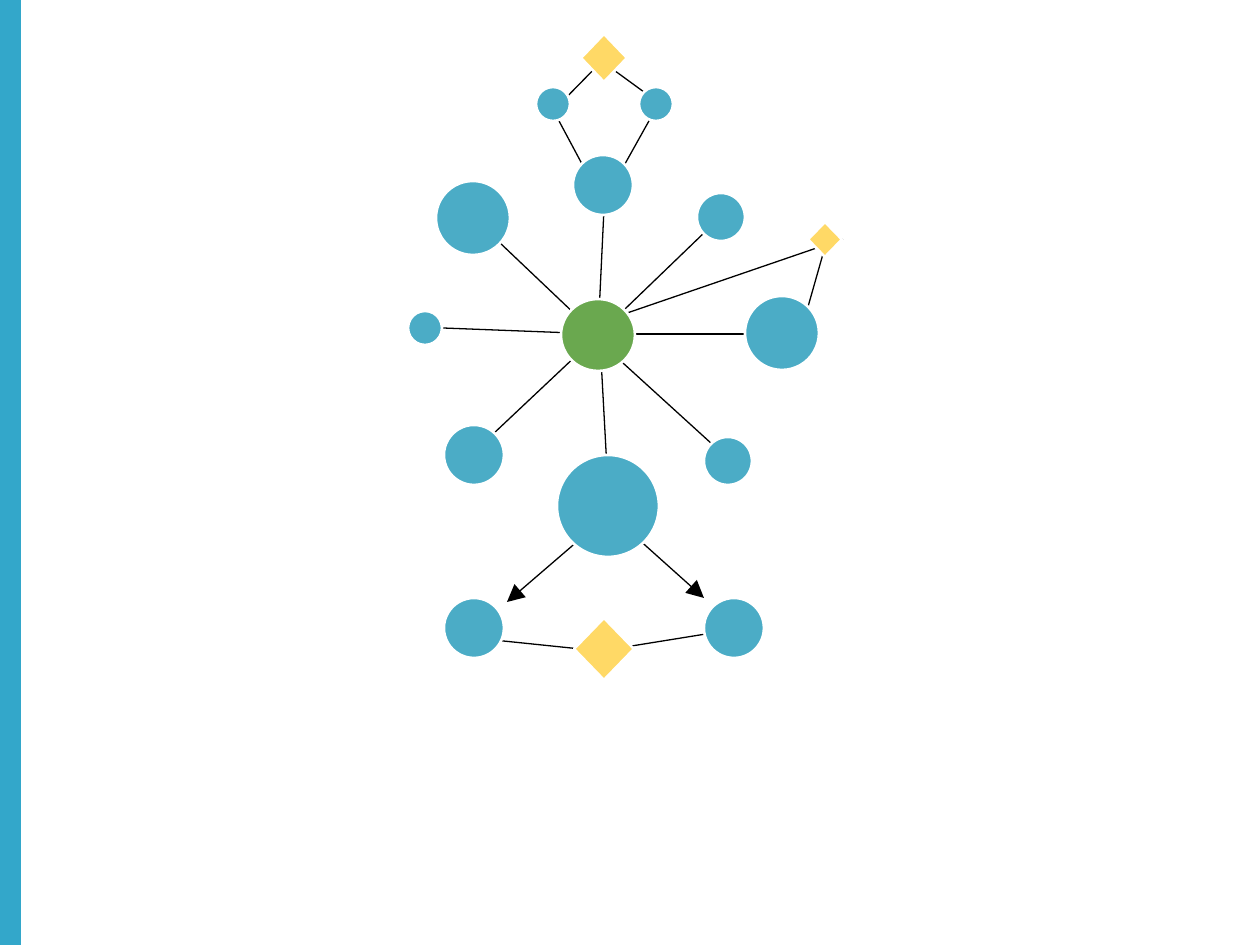
from lxml.etree import SubElement
from pptx import Presentation
from pptx.dml.color import RGBColor
from pptx.enum.shapes import MSO_CONNECTOR, MSO_SHAPE
from pptx.oxml.ns import qn
from pptx.util import Pt

EMU_PER_PX = 914400 // 126
PAGE_WIDTH, PAGE_HEIGHT = 1260, 945
BLUE, GREEN, YELLOW = "4BACC6", "6AA84F", "FFD966"

deck = Presentation()
deck.slide_width = PAGE_WIDTH * EMU_PER_PX
deck.slide_height = PAGE_HEIGHT * EMU_PER_PX
page = deck.slides.add_slide(deck.slide_layouts[6])


def paint(color_format, hex_color):
    color_format.rgb = RGBColor.from_string(hex_color)


def add_node(kind, left, top, width, height, hex_color):
    node = page.shapes.add_shape(
        kind, *(length * EMU_PER_PX for length in (left, top, width, height)))
    node.shadow.inherit = False
    node.fill.solid()
    paint(node.fill.fore_color, hex_color)
    node.line.width = Pt(1.5)
    paint(node.line.color, "FFFFFF")
    return node


# Side band, 80 % opaque
band = add_node(MSO_SHAPE.RECTANGLE, 0, 0, 21, PAGE_HEIGHT, "0092BD")
band.line.fill.background()
band_color = band.fill._xPr.find(qn("a:solidFill"))[0]
SubElement(band_color, qn("a:alpha"), val="80000")

# Links run under the nodes: x1, y1, x2, y2, arrowhead at the end
links = [
    # right diamond
    (598, 323, 843, 239, False),
    (808, 307, 829, 233, False),
    # bottom diamond
    (484, 639, 600, 651, False),
    (607, 650, 731, 630, False),
    # top diamond
    (557, 107, 606, 57, False),
    (644, 92, 596, 57, False),
    # spokes from the hub
    (598, 334, 442, 328, False),
    (598, 336, 478, 222, False),
    (598, 336, 605, 189, False),
    (597, 336, 704, 233, False),
    (598, 334, 780, 334, False),
    (601, 343, 712, 444, False),
    (600, 340, 609, 505, False),
    (595, 338, 474, 452, False),
    # arrows to the bottom circles
    (600, 522, 507, 602, True),
    (617, 520, 704, 598, True),
    # top circle to its two small circles
    (582, 164, 551, 106, False),
    (625, 164, 654, 112, False),
]
for *ends, has_arrow in links:
    link = page.shapes.add_connector(
        MSO_CONNECTOR.STRAIGHT, *(length * EMU_PER_PX for length in ends))
    link.line.width = Pt(0.75)
    paint(link.line.color, "000000")
    if has_arrow:
        SubElement(link.line._get_or_add_ln(), qn("a:tailEnd"),
                   type="triangle", w="lg", len="lg")
    SubElement(link._element.spPr, qn("a:effectLst"))

# Hub
add_node(MSO_SHAPE.OVAL, 561, 299, 74, 72, GREEN)

# Circles: left, top, diameter
circles = [
    (697, 193, 48), (745, 296, 74), (573, 155, 60), (704, 437, 48),
    (557, 455, 102), (444, 425, 60), (408, 311, 34), (436, 181, 74),
    (536, 87, 34), (639, 87, 34), (444, 598, 60), (704, 598, 60),
]
for left, top, diameter in circles:
    add_node(MSO_SHAPE.OVAL, left, top, diameter, diameter, BLUE)

# Diamonds: left, top, width, height
diamonds = [(808, 222, 34, 35), (581, 34, 46, 48), (574, 618, 60, 62)]
for left, top, width, height in diamonds:
    add_node(MSO_SHAPE.DIAMOND, left, top, width, height, YELLOW)

deck.save("out.pptx")
